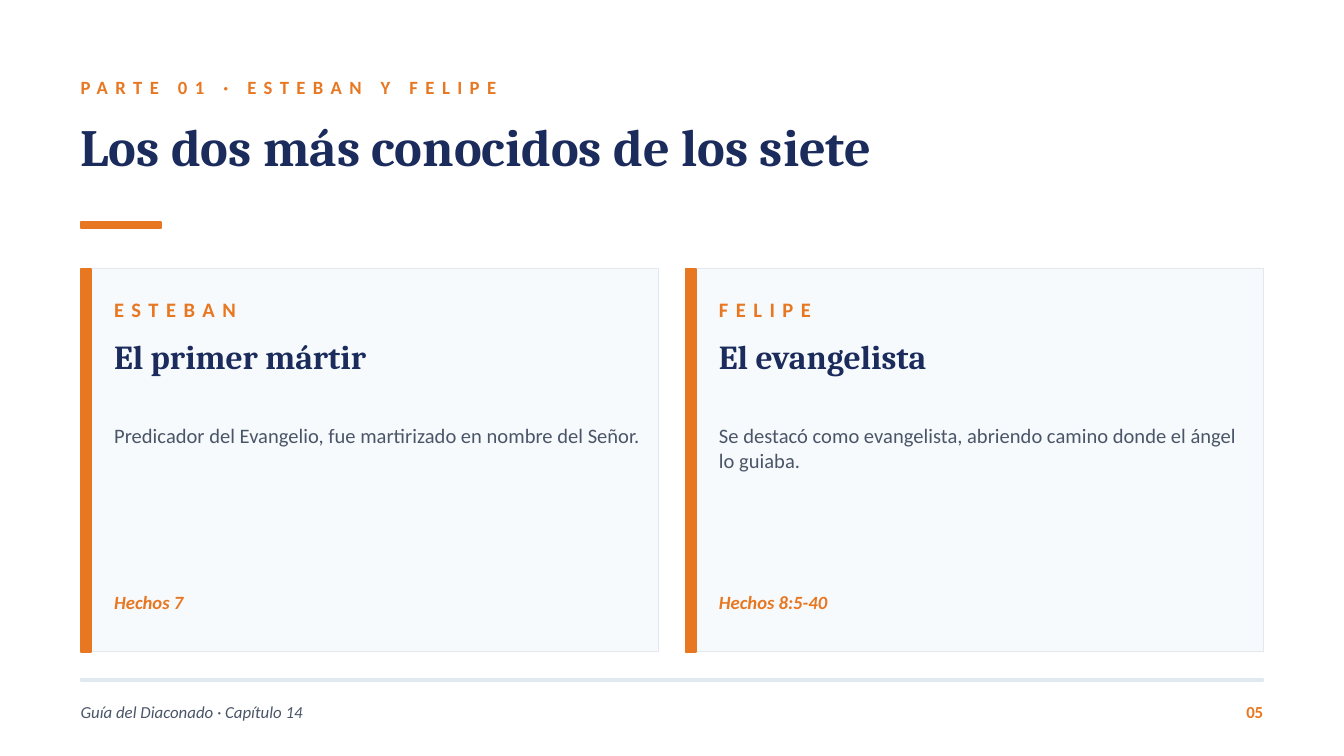
from pptx import Presentation
from pptx.dml.color import RGBColor
from pptx.enum.shapes import MSO_SHAPE
from pptx.enum.text import MSO_ANCHOR, MSO_AUTO_SIZE, PP_ALIGN
from pptx.util import Pt

PX = 4572  # EMU per px, 200 px to the inch
ORANGE = RGBColor(0xE8, 0x77, 0x22)
NAVY = RGBColor(0x1A, 0x2B, 0x5C)
SLATE = RGBColor(0x4A, 0x55, 0x68)
PALE = RGBColor(0xF7, 0xFA, 0xFC)
RULE = RGBColor(0xE2, 0xE8, 0xF0)
SANS, SERIF = "Calibri", "Cambria"

MARGIN, CONTENT_WIDTH = 120, 1760
CARD_TOP, CARD_WIDTH, CARD_HEIGHT, CARD_GAP = 400, 860, 570, 40
CARDS = [
    ("ESTEBAN", "El primer mártir",
     "Predicador del Evangelio, fue martirizado en nombre del Señor.",
     "Hechos 7"),
    ("FELIPE", "El evangelista",
     "Se destacó como evangelista, abriendo camino donde el ángel lo guiaba.",
     "Hechos 8:5-40"),
]


def emu(*lengths):
    return [length * PX for length in lengths]


def fill_text(box, text, size, color, font=SANS, bold=False, italic=False,
              spacing=0, align=PP_ALIGN.LEFT, anchor=MSO_ANCHOR.TOP):
    frame = box.text_frame
    frame.text = text
    frame.word_wrap = True
    frame.auto_size = MSO_AUTO_SIZE.NONE
    frame.vertical_anchor = anchor
    frame.margin_left = frame.margin_right = 0
    frame.margin_top = frame.margin_bottom = 0
    para = frame.paragraphs[0]
    para.alignment = align
    span = para.runs[0]
    span.font.name = font
    span.font.size = Pt(size)
    span.font.bold = bold
    span.font.italic = italic
    span.font.color.rgb = color
    if spacing:  # letter spacing, in hundredths of a point
        span._r.get_or_add_rPr().set("spc", str(spacing * 100))


def add_text(page, left, top, width, height, text, size, color, **style):
    box = page.shapes.add_textbox(*emu(left, top, width, height))
    fill_text(box, text, size, color, **style)


def add_bar(page, left, top, width, height, fill, line=None, line_width=1):
    bar = page.shapes.add_shape(MSO_SHAPE.RECTANGLE,
                                *emu(left, top, width, height))
    bar.shadow.inherit = False
    bar.fill.solid()
    bar.fill.fore_color.rgb = fill
    bar.line.color.rgb = line or fill
    bar.line.width = Pt(line_width)


def add_header(page, left, top):
    add_text(page, left, top, 1400, 60, "PARTE 01 · ESTEBAN Y FELIPE", 10,
             ORANGE, bold=True, spacing=4, anchor=MSO_ANCHOR.MIDDLE)
    title = page.shapes.title
    title.left, title.top, title.width, title.height = emu(
        left, top + 70, 1800, 140)
    fill_text(title, "Los dos más conocidos de los siete", 28, NAVY,
              font=SERIF, bold=True)
    add_bar(page, left, top + 230, 120, 10, ORANGE)


def add_card(page, left, top, width, height, name, role, story, verse):
    add_bar(page, left, top, width, height, PALE, RULE, 0.5)
    add_bar(page, left, top, 16, height, ORANGE)
    inner, inner_width = left + 50, width - 60
    add_text(page, inner, top + 30, inner_width, 60, name, 11, ORANGE,
             bold=True, spacing=4, anchor=MSO_ANCHOR.MIDDLE)
    add_text(page, inner, top + 100, inner_width, 100, role, 18, NAVY,
             font=SERIF, bold=True)
    add_text(page, inner, top + 230, inner_width, 240, story, 11, SLATE)
    add_text(page, inner, top + height - 90, inner_width, 60, verse, 10,
             ORANGE, bold=True, italic=True)


def add_footer(page, left, top, width):
    add_bar(page, left, top, width, 4, RULE)
    add_text(page, left, top + 20, 1200, 60,
             "Guía del Diaconado · Capítulo 14", 9, SLATE, italic=True,
             anchor=MSO_ANCHOR.MIDDLE)
    add_text(page, left + width - 100, top + 20, 100, 60, "05", 9, ORANGE,
             bold=True, align=PP_ALIGN.RIGHT, anchor=MSO_ANCHOR.MIDDLE)


def main():
    deck = Presentation()
    deck.slide_width, deck.slide_height = emu(2000, 1125)
    page = deck.slides.add_slide(deck.slide_layouts[5])  # title only

    add_header(page, MARGIN, 100)
    for index, card in enumerate(CARDS):
        left = MARGIN + index * (CARD_WIDTH + CARD_GAP)
        add_card(page, left, CARD_TOP, CARD_WIDTH, CARD_HEIGHT, *card)
    add_footer(page, MARGIN, 1010, CONTENT_WIDTH)

    deck.save("out.pptx")


if __name__ == "__main__":
    main()
